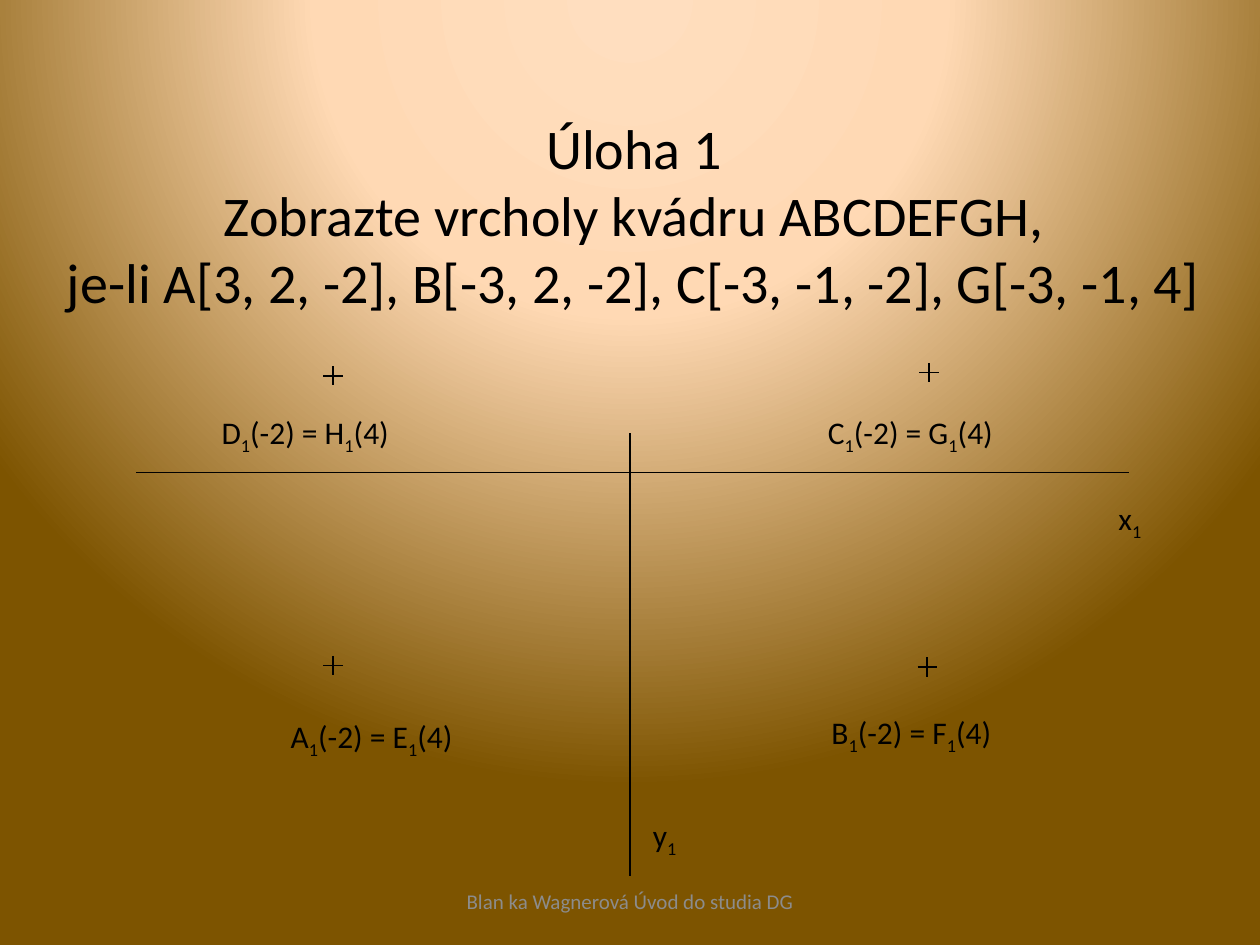
from lxml import etree
from pptx import Presentation
from pptx.dml.color import RGBColor
from pptx.enum import shapes, text
from pptx.oxml import parse_xml
from pptx.oxml.ns import nsdecls, qn
from pptx.util import Pt

THEME = {
    "font": "Calibri", "ink": "000000", "muted": "8C8C8C",
    "title": 32, "label": 18, "footer": 12, "line": 0.75,
    "glow": [(0, "FFDEBF"), (40, "FFD9B4"), (100, "7D5400")],
}


def add_line(parent, x1, y1, x2, y2):
    c = parent.add_connector(shapes.MSO_CONNECTOR.STRAIGHT, Pt(x1), Pt(y1), Pt(x2), Pt(y2))
    c.line.color.rgb = RGBColor.from_string(THEME["ink"])
    c.line.width = Pt(THEME["line"])
    etree.SubElement(c._element.spPr, qn("a:effectLst"))


def add_text(x, y, w, h, parts, size, color="ink", centered=False):
    tf = s.shapes.add_textbox(Pt(x), Pt(y), Pt(w), Pt(h)).text_frame
    tf.word_wrap = True
    p = tf.paragraphs[0]
    if centered:
        tf.vertical_anchor = text.MSO_ANCHOR.MIDDLE
        p.alignment = text.PP_ALIGN.CENTER
    else:
        tf.auto_size = text.MSO_AUTO_SIZE.SHAPE_TO_FIT_TEXT
    p.font.name = THEME["font"]
    p.font.size = Pt(THEME[size])
    p.font.color.rgb = RGBColor.from_string(THEME[color])
    for i, part in enumerate(parts):
        for j, line in enumerate(part.split("\n")):
            if j:
                p.add_line_break()
            r = p.add_run()
            r.text = line
            r.font.name = THEME["font"]
            r.font.size = Pt(THEME[size])
            r.font.color.rgb = RGBColor.from_string(THEME[color])
            if i % 2:
                r._r.get_or_add_rPr().set("baseline", "-25000")


prs = Presentation()
prs.slide_width, prs.slide_height = Pt(720), Pt(540)
s = prs.slides.add_slide(prs.slide_layouts[6])

s.background.fill.solid()
bg = s._element.find(".//" + qn("p:bgPr"))
stops = "".join(
    f'<a:gs pos="{pos * 1000}"><a:srgbClr val="{color}"/></a:gs>' for pos, color in THEME["glow"]
)
bg.replace(bg[0], parse_xml(
    f'<a:gradFill {nsdecls("a")} rotWithShape="1"><a:gsLst>{stops}</a:gsLst>'
    '<a:path path="circle"><a:fillToRect l="50000" t="-80000" r="50000" b="180000"/></a:path>'
    '</a:gradFill>'
))

title = (
    "Úloha 1 \nZobrazte vrcholy kvádru ABCDEFGH, \n"
    "je-li A[3, 2, -2], B[-3, 2, -2], C[-3, -1, -2], G[-3, -1, 4] "
)
add_text(20, 43, 692, 158.5, [title], "title", centered=True)
add_text(246, 500.5, 228, 28.5, ["Blan ka Wagnerová Úvod do studia DG"], "footer", "muted", True)

add_line(s.shapes, 78, 270, 645, 270)
add_line(s.shapes, 360, 247.5, 360, 500.5)

ARM = 5.5
vertices = [
    ("A", "E", 190.3, 380.4, 159, 406),
    ("D", "H", 190.3, 214.8, 119.5, 232.5),
    ("B", "F", 529.8, 381.2, 468, 404),
    ("C", "G", 530.8, 212.8, 466, 232.5),
]
for lower, upper, cx, cy, x, y in vertices:
    cross = s.shapes.add_group_shape().shapes
    add_line(cross, cx, cy - ARM, cx, cy + ARM)
    add_line(cross, cx - ARM, cy, cx + ARM, cy)
    add_text(x, y, 153.5, 29, [lower, "1", f"(-2) = {upper}", "1", "(4)"], "label")

for axis, x, y, w in [("x", 632, 281.5, 40), ("y", 366, 463, 45)]:
    add_text(x, y, w, 29, [axis, "1"], "label")

prs.save("out.pptx")
